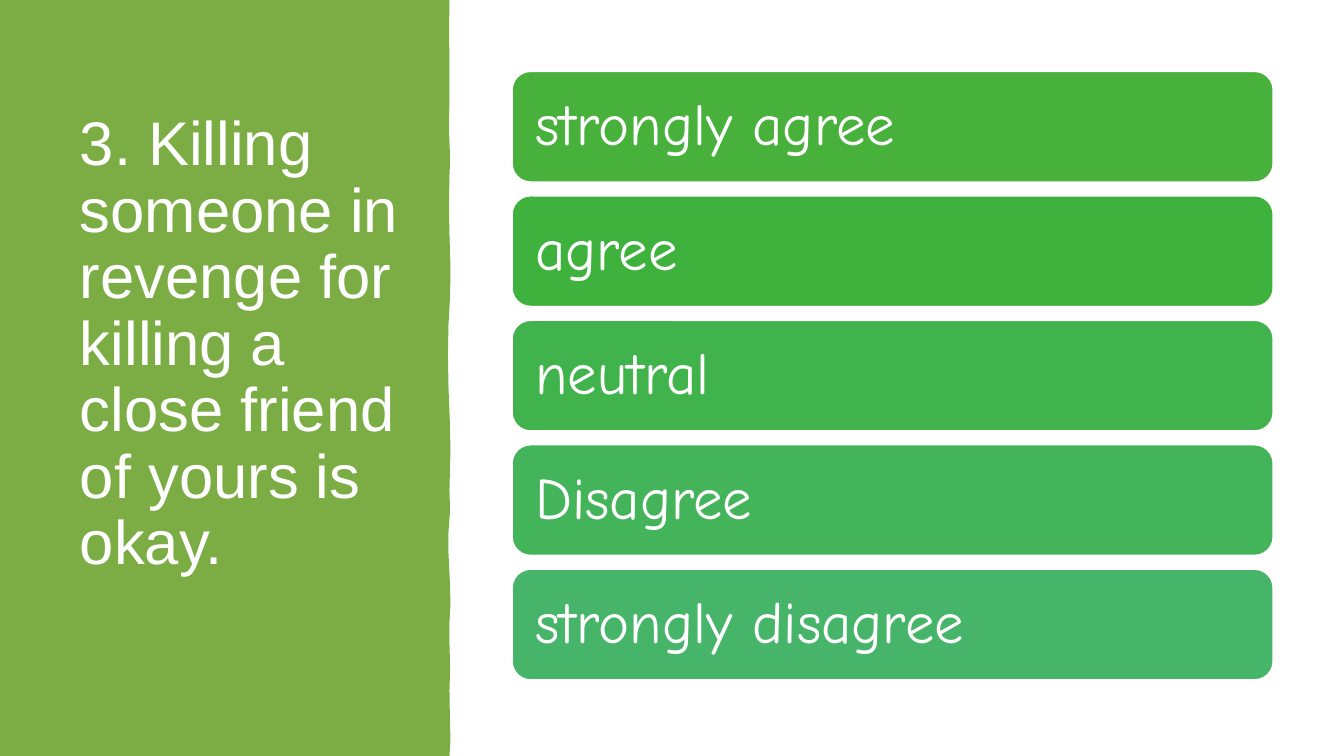
import pptx
import pptx.dml.color
import pptx.enum.shapes
import pptx.enum.text
import pptx.util
from dataclasses import dataclass

Pt = pptx.util.Pt
WHITE = "FFFFFF"
GREEN = "7BAD44"

# Wavy right edge of the side panel: x, y from top to bottom
EDGE = [
    (321.1, 0), (320.8, 22), (321.1, 45), (321.1, 73), (320.6, 88),
    (321.1, 101.5), (321.6, 114), (321.1, 125), (320.7, 146), (321.1, 168),
    (321.8, 190), (321.6, 211), (320.4, 232), (320, 253), (320.4, 276),
    (321.4, 302), (321.8, 321), (321.1, 350), (321.5, 365), (320.4, 380),
    (320.4, 395), (321.5, 418), (321.8, 432), (321, 446), (321.1, 460),
    (321.6, 477), (321.1, 493), (321.4, 512), (321.8, 528), (321.1, 540),
]


@dataclass
class Card:
    text: str
    fill: str


CARDS = [
    Card("strongly agree", "48B13B"),
    Card("agree", "3FB23E"),
    Card("neutral", "41B34C"),
    Card("Disagree", "44B45B"),
    Card("strongly disagree", "47B569"),
]
LEFT, TOP, WIDTH, HEIGHT, STEP = 365.8, 51, 543.6, 79, 88.9


def color(code: str) -> pptx.dml.color.RGBColor:
    return pptx.dml.color.RGBColor.from_string(code)


def paint(shape, code: str) -> None:
    shape.shadow.inherit = False
    shape.fill.solid()
    shape.fill.fore_color.rgb = color(code)


def write(shape, text: str, font: str, size: float) -> None:
    frame = shape.text_frame
    frame.text = text
    frame.word_wrap = True
    frame.vertical_anchor = pptx.enum.text.MSO_ANCHOR.MIDDLE
    line = frame.paragraphs[0]
    line.alignment = pptx.enum.text.PP_ALIGN.LEFT
    line.line_spacing = 0.9
    style = line.runs[0].font
    style.name = font
    style.size = Pt(size)
    style.color.rgb = color(WHITE)


def draw_panel(slide) -> None:
    pen = slide.shapes.build_freeform(0, 0)
    points = [(Pt(x), Pt(y)) for x, y in EDGE + [(0, 540)]]
    pen.add_line_segments(points, close=True)
    panel = pen.convert_to_shape()
    paint(panel, GREEN)
    panel.line.fill.background()


def draw_title(slide) -> None:
    box = slide.shapes.add_textbox(Pt(50), Pt(50.4), Pt(244), Pt(440))
    write(box, "3. Killing someone in revenge for killing a close friend "
          "of yours is okay.", "Arial", 44)
    # A deep bottom margin lifts the text above the middle
    box.text_frame.margin_bottom = Pt(51)


def draw_card(slide, card: Card, top: float) -> None:
    kind = pptx.enum.shapes.MSO_SHAPE.ROUNDED_RECTANGLE
    shape = slide.shapes.add_shape(
        kind, Pt(LEFT), Pt(top), Pt(WIDTH), Pt(HEIGHT))
    paint(shape, card.fill)
    shape.line.color.rgb = color(WHITE)
    shape.line.width = Pt(1)
    write(shape, card.text, "Comic Neue", 42)
    frame = shape.text_frame
    frame.margin_left = frame.margin_right = Pt(12.6)
    frame.margin_top = frame.margin_bottom = Pt(12.6)


def main() -> None:
    deck = pptx.Presentation()
    deck.slide_width, deck.slide_height = Pt(960), Pt(540)
    slide = deck.slides.add_slide(deck.slide_layouts[6])

    # Side panel with the statement
    draw_panel(slide)
    draw_title(slide)

    # Answer cards
    for row, card in enumerate(CARDS):
        draw_card(slide, card, TOP + row * STEP)

    deck.save("out.pptx")


if __name__ == "__main__":
    main()
